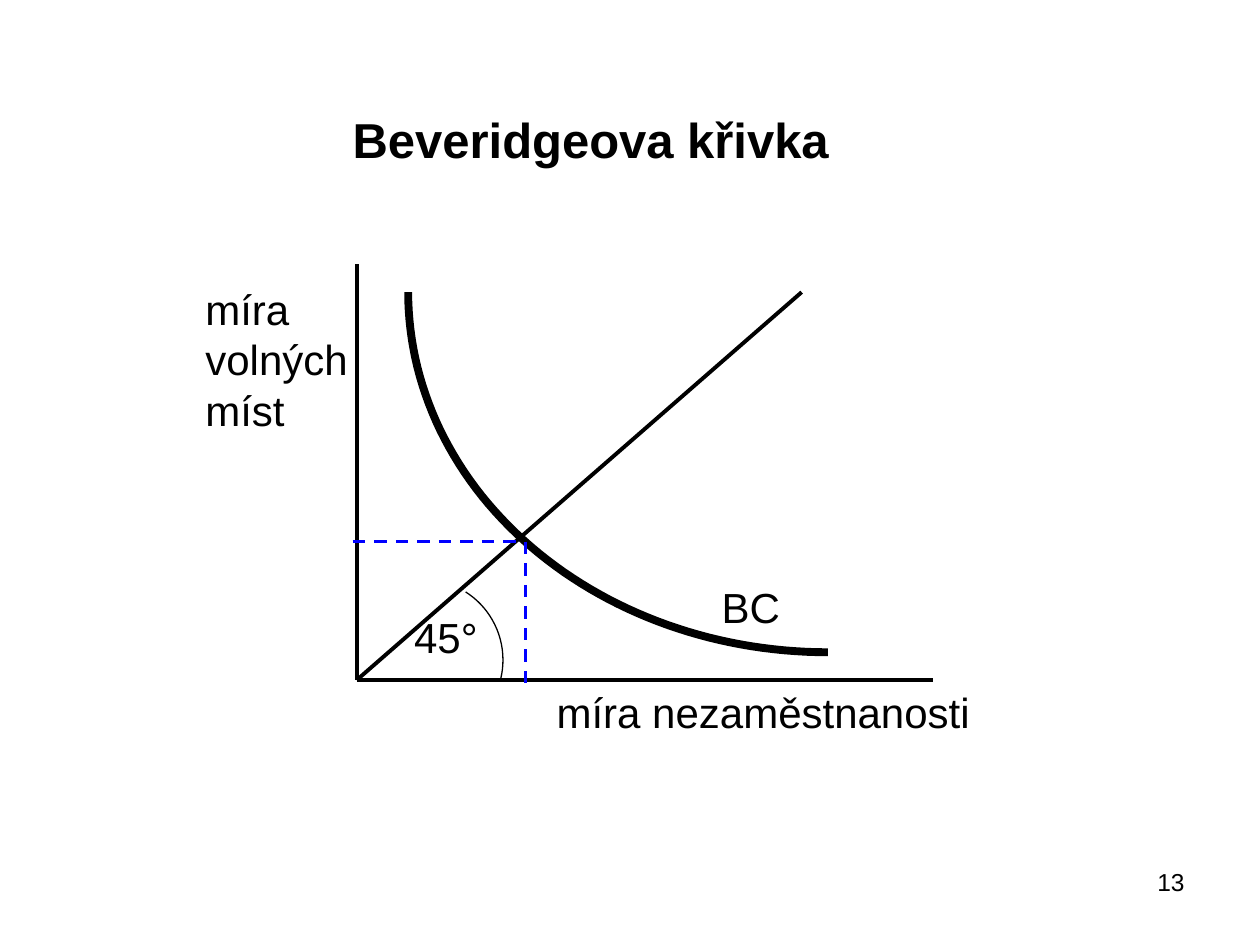
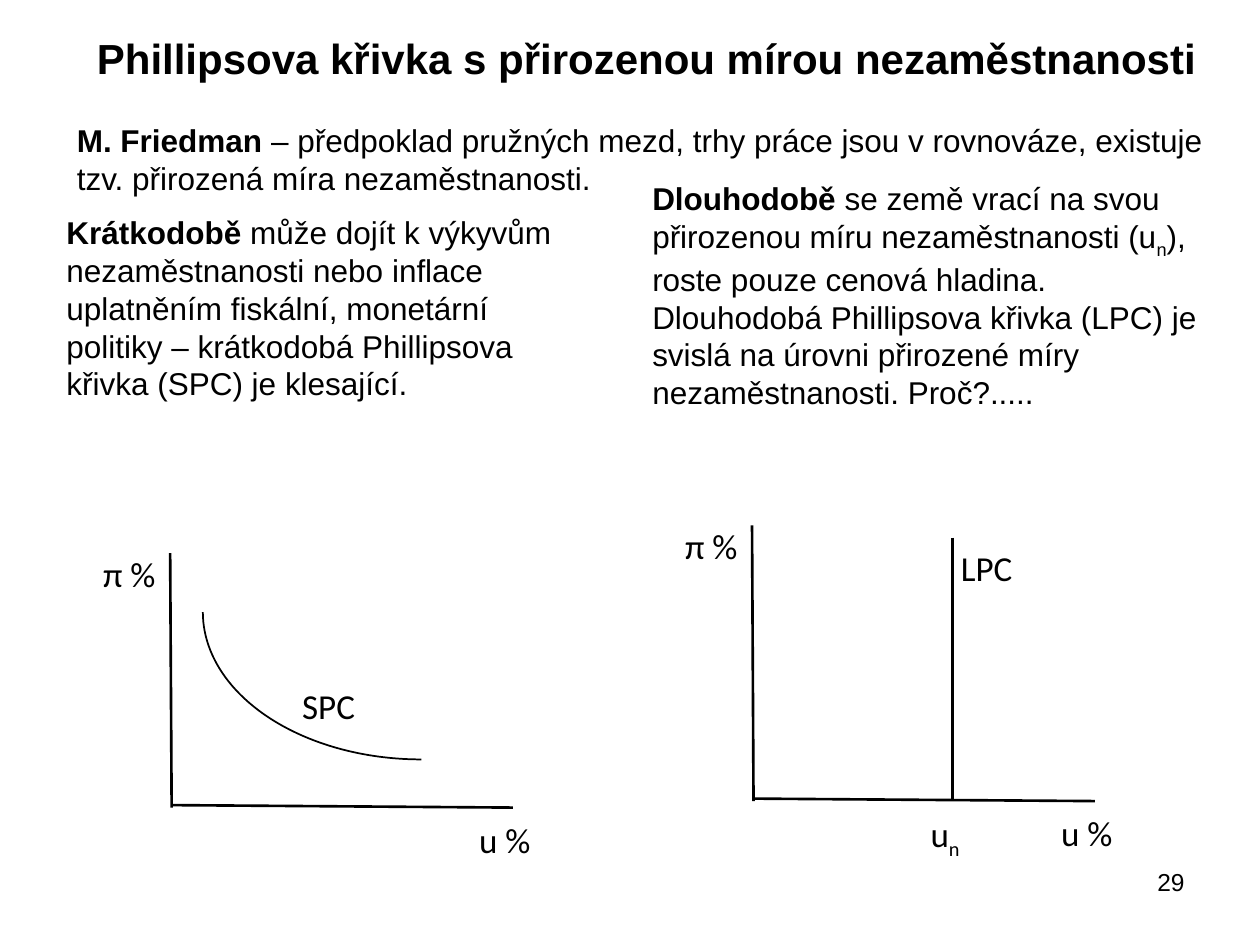
import math

import lxml.etree
import pptx
import pptx.dml.color
import pptx.enum.dml
import pptx.enum.shapes
import pptx.enum.text
import pptx.oxml.ns
import pptx.util

Cm = pptx.util.Cm
Pt = pptx.util.Pt
ALIGN = pptx.enum.text.PP_ALIGN

BLACK = pptx.dml.color.RGBColor(0, 0, 0)
BLUE = pptx.dml.color.RGBColor(0, 0, 255)
BODY_FONT, CHART_FONT = "Arial", "Calibri"


# Shared parts
def add_text(shapes, box, text, size=18, bold=False, font=BODY_FONT, align=ALIGN.LEFT,
             inset=(0.25, 0.13), lead="", sub="", tail="", spacing=None, after=None):
    """One paragraph: bold lead, text, subscript, tail."""
    sp = shapes.add_textbox(*(Cm(v) for v in box))
    tf = sp.text_frame
    tf.word_wrap = True
    tf.margin_left, tf.margin_top = (Cm(v) for v in inset)
    p = tf.paragraphs[0]
    p.alignment = align
    if spacing:
        p.line_spacing = spacing
    if after:
        p.space_after = Pt(after)
    for part, is_bold, is_sub in ((lead, True, False), (text, bold, False),
                                  (sub, bold, True), (tail, bold, False)):
        if not part:
            continue
        r = p.add_run()
        r.text = part
        r.font.name, r.font.size, r.font.bold = font, Pt(size), is_bold
        r.font.color.rgb = BLACK
        if is_sub:
            r._r.get_or_add_rPr().set("baseline", "-25000")
    return sp


def add_line(shapes, x1, y1, x2, y2, width, color=BLACK, dashed=False):
    line = shapes.add_connector(pptx.enum.shapes.MSO_CONNECTOR.STRAIGHT,
                                Cm(x1), Cm(y1), Cm(x2), Cm(y2))
    line.line.color.rgb = color
    line.line.width = Pt(width)
    if dashed:
        line.line.dash_style = pptx.enum.dml.MSO_LINE.DASH
    lxml.etree.SubElement(line._element.spPr, pptx.oxml.ns.qn("a:effectLst"))


def style_outline(sp, width):
    sp.fill.background()
    sp.line.color.rgb = BLACK
    sp.line.width = Pt(width)
    sp.shadow.inherit = False


def add_arc(shapes, box, start, end, width):
    """Arc of the ellipse in box, angles clockwise from the right."""
    sp = shapes.add_shape(pptx.enum.shapes.MSO_SHAPE.ARC, *(Cm(v) for v in box))
    for i, degrees in enumerate((start, end)):
        sp.adjustments[i] = degrees * 0.6  # 60000 units a degree, scaled by 100000
    style_outline(sp, width)


def add_quarter_curve(shapes, cx, cy, rx, ry, width, steps=60):
    """Falling convex curve: lower left quarter of an ellipse."""
    angles = [math.pi * (1 - i / steps / 2) for i in range(steps + 1)]
    points = [(Cm(cx + rx * math.cos(a)), Cm(cy + ry * math.sin(a))) for a in angles]
    builder = shapes.build_freeform(*points[0])
    builder.add_line_segments(points[1:], close=False)
    style_outline(builder.convert_to_shape(), width)


def add_slide(prs, number):
    slide = prs.slides.add_slide(prs.slide_layouts[6])
    add_text(slide.shapes, (18.2, 17.35, 5.93, 1.32), number, size=14, align=ALIGN.RIGHT)
    return slide


# Beveridge curve
def beveridge_chart(slide, x, y, w, h):
    shapes = slide.shapes.add_group_shape().shapes
    base = y + h

    # Axes, curve and 45° line
    add_line(shapes, x, y, x, base, 2.25)
    add_line(shapes, x, base, x + w, base, 2.25)
    add_quarter_curve(shapes, x + 9.5, y + 0.56, 8.46, 7.26, 4.5)
    add_line(shapes, x, base, x + 8.97, y + 0.56, 2.25)
    add_arc(shapes, (x - 0.3, y + 6.35, 3.25, 3.25), 302.5, 13, 0.75)

    # Labels
    for dx, dy, width, height, label in (
            (-3.3, 0.25, 4.6, 3.33, "míra volných míst"),
            (3.78, h, 8.9, 2.26, "míra nezaměstnanosti"),
            (7.11, 6.27, 2.11, 2.26, "BC"),
            (0.91, 6.86, 3.18, 2.26, "45°")):
        add_text(shapes, (x + dx, y + dy, width, height), label, size=24,
                 align=ALIGN.JUSTIFY)

    # Equilibrium
    level = y + 5.59
    add_line(slide.shapes, x - 0.08, level, x + 3.3, level, 1.75, BLUE, dashed=True)
    add_line(slide.shapes, x + 3.4, level, x + 3.4, base + 0.15, 1.75, BLUE, dashed=True)


def beveridge_slide(prs):
    slide = add_slide(prs, "13")
    add_text(slide.shapes, (6.86, 1.73, 12.4, 2.34), "Beveridgeova křivka",
             size=28, bold=True, inset=(0.25, 0.48))
    beveridge_chart(slide, 7.19, 5.33, 11.61, 8.38)


# Phillips curves
def chart_label(shapes, x, y, text, sub=""):
    add_text(shapes, (x, y, 1.7, 1.3), text, sub=sub, size=20, font=CHART_FONT,
             spacing=1.07, after=8)


def phillips_axes(slide, x, y, w, h):
    """Slightly slanted axes with their labels; returns the group's shapes."""
    shapes = slide.shapes.add_group_shape().shapes
    slant = 0.03
    add_line(shapes, x, y, x + slant, y + h, 1.5)
    add_line(shapes, x + slant, y + h - 0.05, x + w, y + h, 1.5)
    chart_label(shapes, x - 1.6, y - 0.2, "π %")
    chart_label(shapes, x + 5.98, y + h + 0.03, "u %")
    return shapes


def long_run_chart(slide, x, y, w, h):
    shapes = phillips_axes(slide, x, y, w, h)
    add_line(shapes, x + 4.04, y + 0.25, x + 4.04, y + h, 1.5)
    chart_label(shapes, x + 3.96, y + 0.23, "LPC")
    chart_label(shapes, x + 3.35, y + h + 0.03, "u", sub="n")


def short_run_chart(slide, x, y, w, h):
    shapes = phillips_axes(slide, x, y, w, h)
    chart_label(shapes, x + 2.41, y + 2.46, "SPC")
    add_arc(shapes, (x + 0.66, y - 1.78, 8.81, 5.94), 90, 180, 1)


def phillips_slide(prs):
    slide = add_slide(prs, "29")
    shapes = slide.shapes
    add_text(shapes, (0.3, 0.53, 24.2, 1.3),
             "Phillipsova křivka s přirozenou mírou nezaměstnanosti",
             size=24, bold=True, align=ALIGN.CENTER, inset=(1.52, 0.13))

    # Explanations
    add_text(shapes, (1.3, 2.31, 23.2, 1.8),
             "– předpoklad pružných mezd, trhy práce jsou v rovnováze, existuje "
             "tzv. přirozená míra nezaměstnanosti.", lead="M. Friedman ")
    add_text(shapes, (1.09, 4.17, 10.8, 4.11),
             "může dojít k výkyvům nezaměstnanosti nebo inflace uplatněním fiskální, "
             "monetární politiky – krátkodobá Phillipsova křivka (SPC) je klesající.",
             lead="Krátkodobě ")
    add_text(shapes, (12.9, 3.48, 11.68, 4.88),
             "se země vrací na svou přirozenou míru nezaměstnanosti (u",
             lead="Dlouhodobě ", sub="n",
             tail="), roste pouze cenová hladina. Dlouhodobá Phillipsova křivka (LPC) "
                  "je svislá na úrovni přirozené míry nezaměstnanosti. Proč?.....")

    # Charts
    long_run_chart(slide, 15.16, 10.59, 6.91, 5.56)
    short_run_chart(slide, 3.43, 11.15, 6.91, 5.13)


def main():
    prs = pptx.Presentation()
    prs.slide_width, prs.slide_height = Cm(25.4), Cm(19.05)
    beveridge_slide(prs)
    phillips_slide(prs)
    prs.save("out.pptx")


if __name__ == "__main__":
    main()
